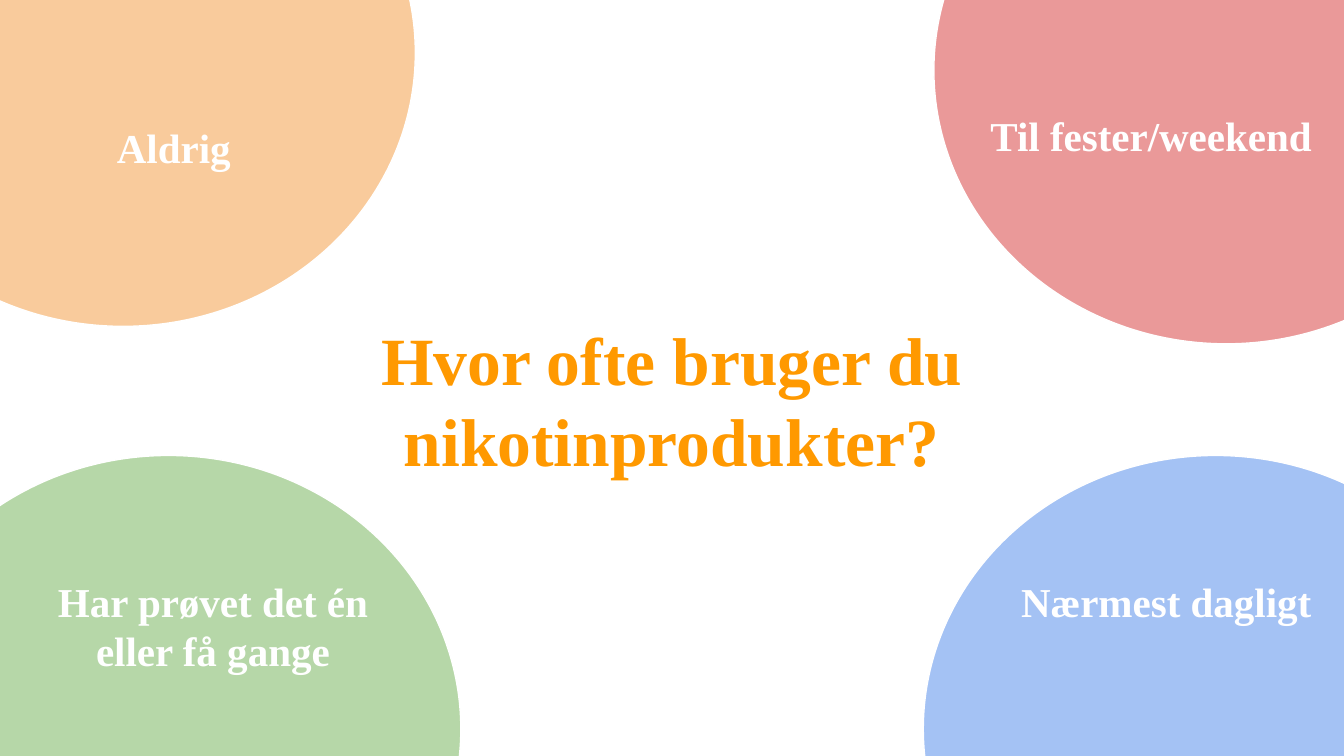
"""Build a slide asking how often nicotine products are used, with four answers."""
from dataclasses import dataclass

from pptx import Presentation
from pptx.dml.color import RGBColor
from pptx.enum.shapes import MSO_SHAPE
from pptx.enum.text import MSO_ANCHOR, PP_ALIGN
from pptx.slide import Slide
from pptx.util import Cm, Pt


@dataclass(frozen=True)
class Theme:
    font: str = "Times New Roman"
    question_color: str = "FF9900"
    answer_color: str = "FFFFFF"
    outline_color: str = "FFFFFF"
    question_size: float = 36.2
    answer_size: float = 22
    outline_width: float = 0.75
    circle_width: float = 11.05
    circle_height: float = 10.34
    inset: float = 0.25


@dataclass(frozen=True)
class Label:
    text: str
    left: float
    top: float
    width: float
    height: float
    align: PP_ALIGN = PP_ALIGN.LEFT
    anchor: MSO_ANCHOR = MSO_ANCHOR.TOP


@dataclass(frozen=True)
class Circle:
    left: float
    top: float
    color: str


THEME = Theme()
QUESTION = Label("Hvor ofte bruger du nikotinprodukter?", 5.13, 5.56, 15.14, 3.96,
                 PP_ALIGN.CENTER, MSO_ANCHOR.MIDDLE)
CIRCLES = (
    Circle(-3.2, -4.17, "F9CB9C"),
    Circle(17.65, -3.84, "EA9999"),
    Circle(-2.34, 8.61, "B6D7A8"),
    Circle(17.45, 8.61, "A4C2F4"),
)
ANSWERS = (
    Label("Aldrig", 1.96, 2.06, 8.33, 1.45),
    Label("Til fester/weekend", 18.47, 1.83, 8.33, 1.45),
    Label("Nærmest dagligt", 19.05, 10.64, 6.63, 1.45),
    Label("Har prøvet det én eller få gange", 0.71, 10.64, 6.63, 2.39, PP_ALIGN.CENTER),
)


def draw_circle(slide: Slide, circle: Circle) -> None:
    answer_circle = slide.shapes.add_shape(
        MSO_SHAPE.OVAL, Cm(circle.left), Cm(circle.top),
        Cm(THEME.circle_width), Cm(THEME.circle_height))
    answer_circle.shadow.inherit = False
    answer_circle.fill.solid()
    answer_circle.fill.fore_color.rgb = RGBColor.from_string(circle.color)
    answer_circle.line.color.rgb = RGBColor.from_string(THEME.outline_color)
    answer_circle.line.width = Pt(THEME.outline_width)


def draw_label(slide: Slide, label: Label, size: float, color: str) -> None:
    frame = slide.shapes.add_textbox(
        Cm(label.left), Cm(label.top), Cm(label.width), Cm(label.height)).text_frame
    frame.word_wrap = True
    frame.vertical_anchor = label.anchor
    frame.margin_left = frame.margin_right = Cm(THEME.inset)
    frame.margin_top = frame.margin_bottom = Cm(THEME.inset)
    paragraph = frame.paragraphs[0]
    paragraph.alignment = label.align
    wording = paragraph.add_run()
    wording.text = label.text
    wording.font.name = THEME.font
    wording.font.size = Pt(size)
    wording.font.bold = True
    wording.font.color.rgb = RGBColor.from_string(color)


def main() -> None:
    presentation = Presentation()
    presentation.slide_width, presentation.slide_height = Cm(25.4), Cm(14.29)
    slide = presentation.slides.add_slide(presentation.slide_layouts[6])
    draw_label(slide, QUESTION, THEME.question_size, THEME.question_color)
    for circle in CIRCLES:
        draw_circle(slide, circle)
    for answer in ANSWERS:
        draw_label(slide, answer, THEME.answer_size, THEME.answer_color)
    presentation.save("out.pptx")


if __name__ == "__main__":
    main()
